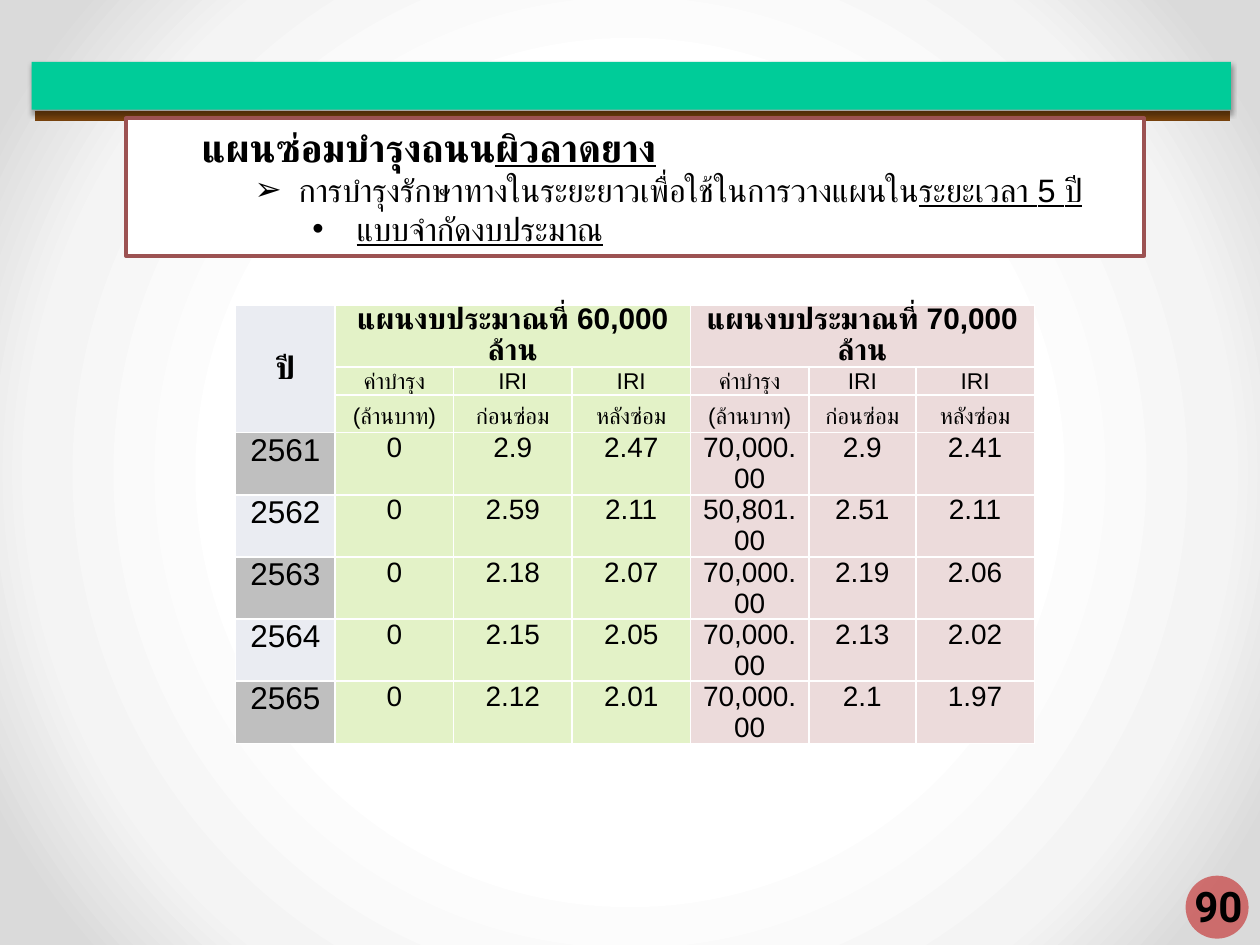
from lxml import etree
from pptx import Presentation
from pptx.dml.color import RGBColor
from pptx.enum.shapes import MSO_CONNECTOR, MSO_SHAPE
from pptx.enum.text import MSO_ANCHOR, MSO_AUTO_SIZE, PP_ALIGN
from pptx.oxml import parse_xml
from pptx.oxml.ns import nsdecls, qn
from pptx.util import Inches, Pt

RECTANGLE, OVAL = MSO_SHAPE.RECTANGLE, MSO_SHAPE.OVAL
STRAIGHT = MSO_CONNECTOR.STRAIGHT
CENTER, LEFT = PP_ALIGN.CENTER, PP_ALIGN.LEFT
TOP, MIDDLE = MSO_ANCHOR.TOP, MSO_ANCHOR.MIDDLE
NO_AUTOFIT = MSO_AUTO_SIZE.NONE

GREEN, ROSE, PALE, GREY = "E3F2C7", "ECDBDB", "EAECF2", "BFBFBF"
BLACK, WHITE = "000000", "FFFFFF"

PLANS = ["แผนงบประมาณที่ 60,000 ล้าน", "แผนงบประมาณที่ 70,000 ล้าน"]
MEASURES = [["ค่าบำรุง", "IRI", "IRI"], ["(ล้านบาท)", "ก่อนซ่อม", "หลังซ่อม"]]
YEARS = [
    ["2561", "0", "2.9", "2.47", "70,000.00", "2.9", "2.41"],
    ["2562", "0", "2.59", "2.11", "50,801.00", "2.51", "2.11"],
    ["2563", "0", "2.18", "2.07", "70,000.00", "2.19", "2.06"],
    ["2564", "0", "2.15", "2.05", "70,000.00", "2.13", "2.02"],
    ["2565", "0", "2.12", "2.01", "70,000.00", "2.1", "1.97"],
]
COLUMN_WIDTHS = [0.79, 0.94, 0.94, 0.94, 0.94, 0.85, 0.94]
ROW_HEIGHTS = [0.28, 0.22, 0.22] + [0.33] * len(YEARS)
LINE_PITCH = 17.75
MEASURE_PITCHES = [15.5, LINE_PITCH]

# level, left indent, first-line indent, bullet, size, bold, runs (text, underlined)
OUTLINE = [
    (1, 0.5, 0, None, 22.1, True,
     [("แผนซ่อมบำรุงถนน", False), ("ผิวลาดยาง", True)]),
    (2, 1.27, -0.35, "➢", 18.5, False,
     [("การบำรุงรักษาทางในระยะยาวเพื่อใช้ในการวางแผนใน", False),
      ("ระยะเวลา 5 ปี", True)]),
    (3, 1.73, -0.35, "•", 18.5, False, [("แบบจำกัดงบประมาณ", True)]),
]


def rgb(color):
    return RGBColor.from_string(color)


class SlideBuilder:
    font = "Arial"

    def __init__(self, slide):
        self.slide = slide

    def background(self, stops):
        """Circular gradient spreading from the centre."""
        colors = "".join(f'<a:gs pos="{pos * 1000}"><a:srgbClr val="{color}"/></a:gs>'
                         for pos, color in stops)
        fill = parse_xml(
            f'<a:gradFill {nsdecls("a")} rotWithShape="1"><a:gsLst>{colors}</a:gsLst>'
            '<a:path path="circle"><a:fillToRect l="50000" t="50000" r="50000" b="50000"/>'
            '</a:path></a:gradFill>')
        self.slide.background.fill.solid()
        solid = self.slide.element.find(".//" + qn("p:bgPr")).find(qn("a:solidFill"))
        solid.getparent().replace(solid, fill)

    def shape(self, kind, box, color, alpha=None):
        shape = self.slide.shapes.add_shape(kind, *map(Inches, box))
        shape.shadow.inherit = False
        shape.fill.solid()
        shape.fill.fore_color.rgb = rgb(color)
        shape.line.fill.background()
        if alpha:
            fill_color = shape.element.spPr.find(qn("a:solidFill"))[0]
            etree.SubElement(fill_color, qn("a:alpha"), val=str(alpha * 1000))
        return shape

    def drop_shadow(self, shape, blur, distance, alpha):
        effects = shape.element.spPr.find(qn("a:effectLst"))
        effects.append(parse_xml(
            f'<a:outerShdw {nsdecls("a")} blurRad="{Pt(blur)}" dist="{Pt(distance)}" '
            'dir="5400000" algn="t" rotWithShape="0"><a:srgbClr val="000000">'
            f'<a:alpha val="{alpha * 1000}"/></a:srgbClr></a:outerShdw>'))

    def line(self, start, end, color, width):
        line = self.slide.shapes.add_connector(STRAIGHT, *map(Inches, (*start, *end)))
        line.line.color.rgb = rgb(color)
        line.line.width = Pt(width)
        etree.SubElement(line.element.spPr, qn("a:effectLst"))

    def run(self, paragraph, text, size, bold=False, underline=False, font=None):
        run = paragraph.add_run()
        run.text = text
        run.font.size, run.font.bold = Pt(size), bold
        run.font.underline = underline
        run.font.color.rgb = rgb(BLACK)
        run.font.name = font or self.font
        etree.SubElement(run.font._element, qn("a:cs"), typeface=font or self.font)

    def text(self, box, text, size, font):
        frame = self.slide.shapes.add_textbox(*map(Inches, box)).text_frame
        frame.word_wrap = False
        frame.vertical_anchor = MIDDLE
        frame.paragraphs[0].alignment = CENTER
        self.run(frame.paragraphs[0], text, size, bold=True, font=font)

    def outline(self, body, box, items, border):
        """Framed list in the body placeholder, brought to the front."""
        body.left, body.top, body.width, body.height = map(Inches, box)
        body.fill.solid()
        body.fill.fore_color.rgb = rgb(WHITE)
        body.line.color.rgb, body.line.width = rgb(border), Pt(2.25)
        frame = body.text_frame
        frame.auto_size, frame.vertical_anchor = NO_AUTOFIT, TOP
        frame.margin_top = Inches(0.04)
        for index, (level, left, first, bullet, size, bold, runs) in enumerate(items):
            paragraph = frame.add_paragraph() if index else frame.paragraphs[0]
            paragraph.level, paragraph.alignment = level, LEFT
            paragraph.space_before = Pt(0)
            properties = paragraph._p.get_or_add_pPr()
            properties.set("marL", str(Inches(left)))
            properties.set("indent", str(Inches(first)))
            if bullet:
                etree.SubElement(properties, qn("a:buFont"), typeface=self.font)
                etree.SubElement(properties, qn("a:buChar"), char=bullet)
            else:
                etree.SubElement(properties, qn("a:buNone"))
            for text, underline in runs:
                self.run(paragraph, text, size, bold, underline)
        self.slide.shapes._spTree.append(body.element)

    def table(self, left, top, widths, heights):
        frame = self.slide.shapes.add_table(
            len(heights), len(widths),
            *map(Inches, (left, top, sum(widths), sum(heights))))
        table = frame.table
        table.first_row = table.horz_banding = False
        for column, width in zip(table.columns, widths):
            column.width = Inches(width)
        for row, height in zip(table.rows, heights):
            row.height = Inches(height)
        for cell in table.iter_cells():
            for position, side in enumerate(("lnL", "lnR", "lnT", "lnB")):
                cell._tc.get_or_add_tcPr().insert(position, parse_xml(
                    f'<a:{side} {nsdecls("a")} w="{Pt(1)}"><a:solidFill>'
                    f'<a:srgbClr val="{WHITE}"/></a:solidFill></a:{side}>'))
        return table

    def cell(self, cell, text, color, size, bold=False, anchor=MIDDLE,
             side_margin=0, pitch=None):
        cell.fill.solid()
        cell.fill.fore_color.rgb = rgb(color)
        cell.vertical_anchor = anchor
        cell.margin_left = cell.margin_right = Inches(side_margin)
        cell.margin_top = cell.margin_bottom = 0
        paragraph = cell.text_frame.paragraphs[0]
        paragraph.alignment = CENTER
        if pitch:
            paragraph.line_spacing = Pt(pitch)
        self.run(paragraph, text, size, bold)


def main():
    deck = Presentation()
    deck.slide_width, deck.slide_height = Inches(10), Inches(7.5)
    slide = deck.slides.add_slide(deck.slide_layouts[1])
    title, body = slide.placeholders
    title.element.getparent().remove(title.element)
    builder = SlideBuilder(slide)
    builder.background([(50, WHITE), (76, "F4F4F4"), (92, "DADADA")])

    # Page number and rule
    builder.shape(OVAL, (9.41, 6.95, 0.5, 0.5), "C00000", alpha=50)
    builder.line((0.28, 0.92), (9.76, 0.92), "77420D", 6)
    builder.text((9.38, 6.98, 0.58, 0.42), "90", 24, "Roboto")

    # Budget table: header
    budget = builder.table(1.87, 2.42, COLUMN_WIDTHS, ROW_HEIGHTS)
    budget.cell(0, 0).merge(budget.cell(2, 0))
    builder.cell(budget.cell(0, 0), "ปี", PALE, 18, bold=True)
    for first, plan, color in zip((1, 4), PLANS, (GREEN, ROSE)):
        budget.cell(0, first).merge(budget.cell(0, first + 2))
        builder.cell(budget.cell(0, first), plan, color, 17, bold=True, pitch=LINE_PITCH)
        for row, (labels, pitch) in enumerate(zip(MEASURES, MEASURE_PITCHES), 1):
            for column, label in enumerate(labels, first):
                builder.cell(budget.cell(row, column), label, color, 13, pitch=pitch)

    # Budget table: one row per year
    for row, values in enumerate(YEARS, 3):
        colors = [GREY if row % 2 else PALE] + [GREEN] * 3 + [ROSE] * 3
        for column, (value, color) in enumerate(zip(values, colors)):
            size, pitch = (16, LINE_PITCH) if column else (18, None)
            builder.cell(budget.cell(row, column), value, color, size,
                         anchor=TOP, side_margin=0.07, pitch=pitch)

    # Header band and framed heading
    band = builder.shape(RECTANGLE, (0.25, 0.49, 9.52, 0.38), "00CC99")
    builder.drop_shadow(band, blur=3.1, distance=1.8, alpha=35)
    builder.outline(body, (1, 0.94, 8.08, 1.09), OUTLINE, "9C5252")

    deck.save("out.pptx")


if __name__ == "__main__":
    main()
